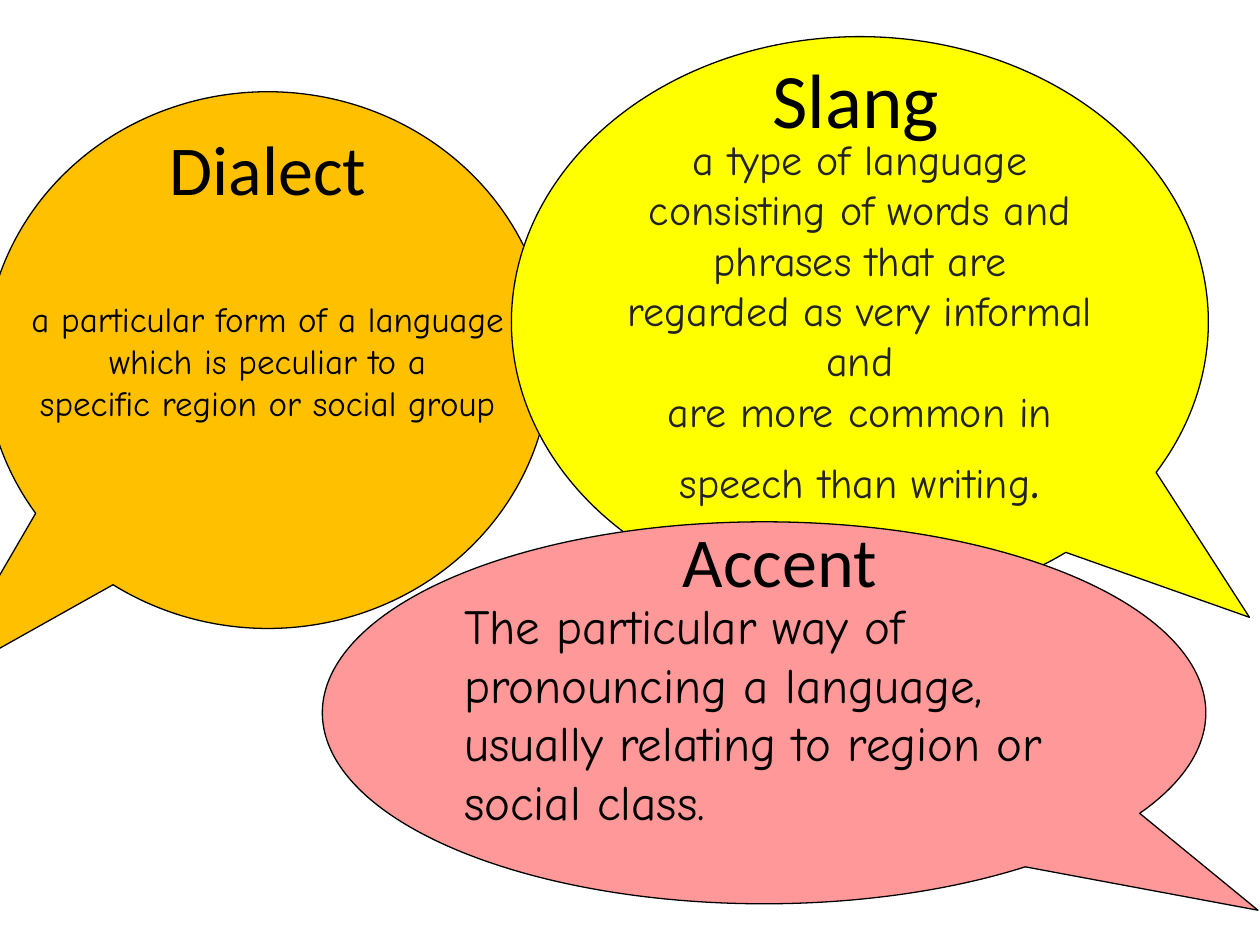
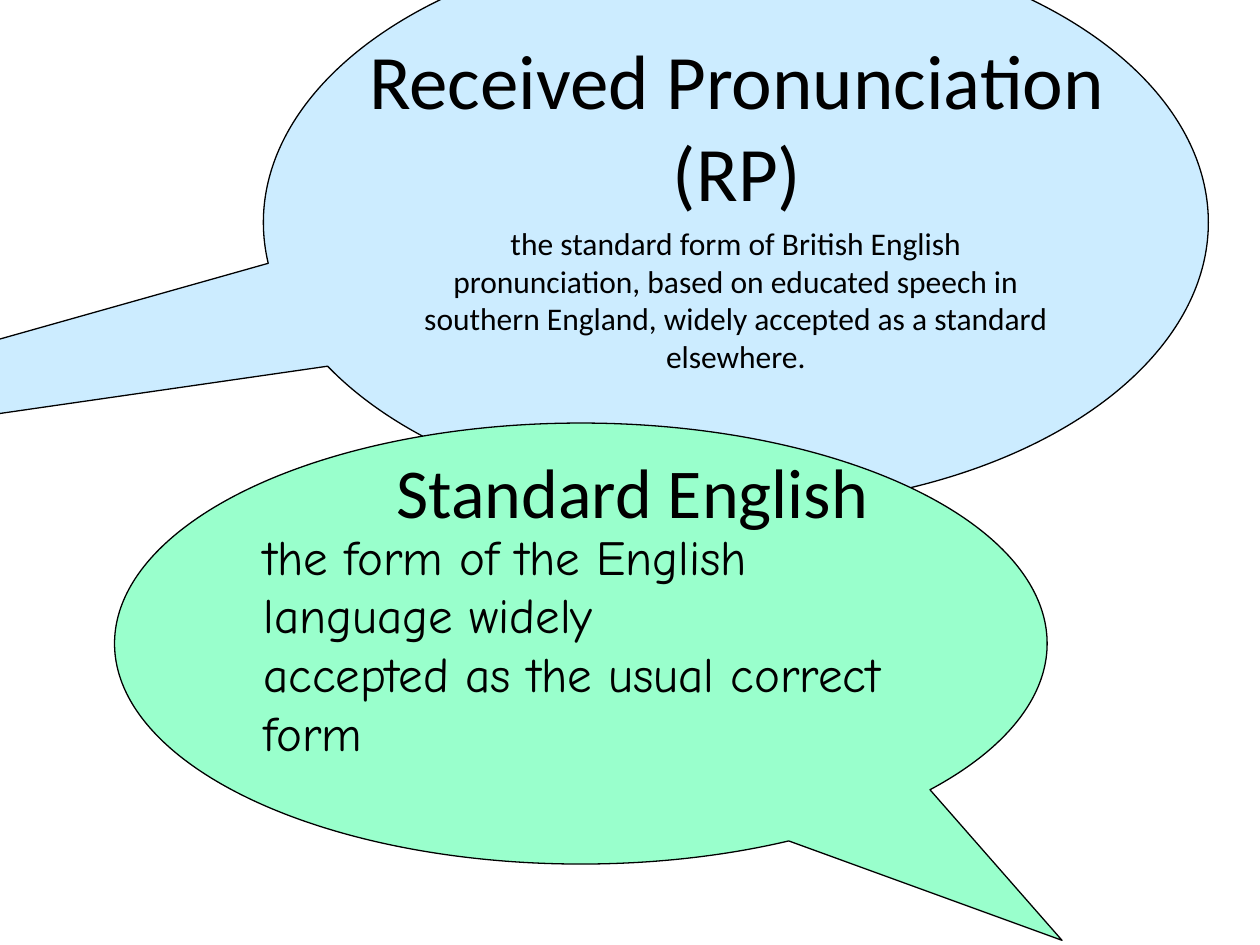
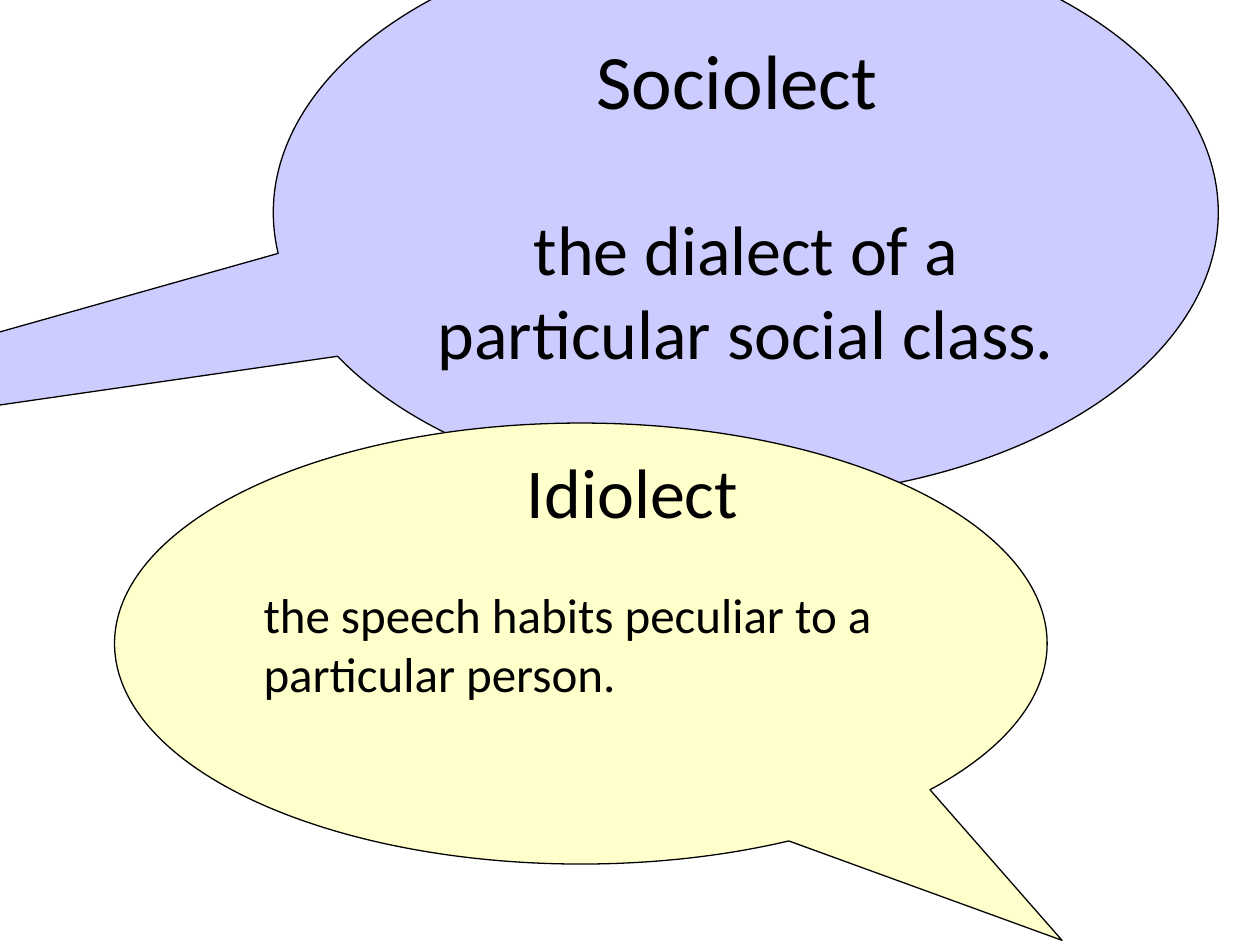
from dataclasses import dataclass, replace

from pptx import Presentation
from pptx.dml.color import RGBColor
from pptx.enum.shapes import MSO_SHAPE as Shape
from pptx.enum.text import MSO_ANCHOR as Anchor, MSO_AUTO_SIZE as AutoSize, PP_ALIGN as Align
from pptx.util import Cm, Pt

BLACK, DARK_GREY = "000000", "222222"
ORANGE, YELLOW, PINK = "FFC000", "FFFF00", "FF9999"
SKY, MINT, LILAC, CREAM = "CCECFF", "99FFCC", "CCCCFF", "FFFFCC"
CALIBRI, COMIC = "Calibri", "Comic Neue"
INSET_TOP = 0.13
BELOW_HEADING = 3.23


@dataclass(frozen=True)
class Outline:
    """Ellipse frame in cm; the tail tip is a fraction of the size from the centre."""
    left: float
    top: float
    width: float
    height: float
    tail: tuple[float, float]


@dataclass(frozen=True)
class Run:
    text: str
    size: int
    font: str = CALIBRI
    color: str = BLACK


@dataclass(frozen=True)
class Bubble:
    outline: Outline
    fill: str
    paragraphs: list[list[Run]]
    align: Align = Align.CENTER
    wrap: bool = True
    inset_top: float = INSET_TOP


@dataclass(frozen=True)
class Heading:
    lines: list[str]
    center: float
    top: float
    width: float
    size: int = 40

    @property
    def height(self) -> float:
        return len(self.lines) * self.size * 0.043 + 0.25


RIGHT_TAIL = (0.559, 0.517)
DIALECT = Outline(-0.3, 1.85, 11.4, 10.82, (-0.586, 0.603))
SLANG = Outline(10.31, 0.74, 14.05, 11.51, RIGHT_TAIL)
ACCENT = Outline(6.5, 10.52, 17.81, 7.7, RIGHT_TAIL)
UPPER = Outline(5.31, -1.27, 19.05, 11.51, (-1.35, 0.471))
LOWER = Outline(2.31, 8.53, 18.8, 8.89, (0.516, 0.673))


def upper_heading(lines: list[str], width: float) -> Heading:
    return Heading(lines, 14.86, 0.53, width, 44)


def lower_heading(line: str, width: float) -> Heading:
    return Heading([line], 12.75, 8.92, width)


# Each slide: its bubbles from back to front, then its headings, the first being the title.
SLIDES: list[tuple[list[Bubble], list[Heading]]] = [
    (
        [
            Bubble(DIALECT, ORANGE, [
                [Run("a particular form of a language", 20, COMIC)],
                [Run("which is peculiar to a", 20, COMIC)],
                [Run("specific region or social group", 20, COMIC)],
            ], wrap=False),
            Bubble(SLANG, YELLOW, [
                [Run("a type of language consisting of words and phrases "
                     "that are regarded as very informal and", 24, COMIC, DARK_GREY)],
                [Run("are more common in speech than writing", 24, COMIC, DARK_GREY),
                 Run(".", 36, COMIC, DARK_GREY)],
            ]),
            Bubble(ACCENT, PINK, [
                [Run("The particular way of pronouncing a language, "
                     "usually relating to region or social class.", 28, COMIC)],
            ], Align.LEFT),
        ],
        [
            Heading(["Dialect"], 5.4, 2.41, 4.5),
            Heading(["Slang"], 17.25, 0.91, 3.91, 44),
            Heading(["Accent"], 15.72, 10.31, 4.47),
        ],
    ),
    (
        [
            Bubble(UPPER, SKY, [
                [Run("the standard form of British English pronunciation, based on educated "
                     "speech in southern England, widely accepted as a standard elsewhere.", 18)],
            ], inset_top=BELOW_HEADING),
            Bubble(LOWER, MINT, [
                [Run("the form of the English language widely", 28, COMIC)],
                [Run("accepted as the usual correct form", 28, COMIC)],
            ], Align.LEFT),
        ],
        [
            upper_heading(["Received Pronunciation", "(RP)"], 15.49),
            lower_heading("Standard English", 10.11),
        ],
    ),
    (
        [
            Bubble(replace(UPPER, left=5.51, top=-1.47), LILAC, [
                [Run("the dialect of a particular social class.", 40)],
            ], inset_top=BELOW_HEADING),
            Bubble(LOWER, CREAM, [
                [Run("the speech habits peculiar to a particular person.", 28)],
            ], Align.LEFT),
        ],
        [
            upper_heading(["Sociolect"], 6.25),
            lower_heading("Idiolect", 4.8),
        ],
    ),
]


def rgb(value: str) -> RGBColor:
    return RGBColor.from_string(value)


def write(tf, paragraphs: list[list[Run]], align: Align) -> None:
    for i, runs in enumerate(paragraphs):
        p = tf.add_paragraph() if i else tf.paragraphs[0]
        p.alignment = align
        for run in runs:
            r = p.add_run()
            r.text = run.text
            r.font.size = Pt(run.size)
            r.font.name = run.font
            r.font.color.rgb = rgb(run.color)


def draw_bubble(s, bubble: Bubble) -> None:
    o = bubble.outline
    sp = s.shapes.add_shape(Shape.OVAL_CALLOUT, Cm(o.left), Cm(o.top), Cm(o.width), Cm(o.height))
    sp.adjustments[0], sp.adjustments[1] = o.tail
    sp.shadow.inherit = False
    sp.fill.solid()
    sp.fill.fore_color.rgb = rgb(bubble.fill)
    sp.line.color.rgb = rgb(BLACK)
    sp.line.width = Pt(0.75)
    tf = sp.text_frame
    tf.word_wrap = bubble.wrap
    tf.vertical_anchor = Anchor.MIDDLE
    tf.margin_top = Cm(bubble.inset_top)
    write(tf, bubble.paragraphs, bubble.align)


def draw_heading(s, heading: Heading, is_title: bool) -> None:
    if is_title:
        sp = s.shapes.title
        sp.element.getparent().append(sp.element)  # in front of the bubbles
    else:
        sp = s.shapes.add_textbox(0, 0, 0, 0)
    sp.left, sp.top = Cm(heading.center - heading.width / 2), Cm(heading.top)
    sp.width, sp.height = Cm(heading.width), Cm(heading.height)
    tf = sp.text_frame
    tf.word_wrap = False
    tf.auto_size = AutoSize.SHAPE_TO_FIT_TEXT
    tf.vertical_anchor = Anchor.TOP
    write(tf, [[Run(line, heading.size)] for line in heading.lines], Align.CENTER)


def main() -> None:
    prs = Presentation()
    prs.slide_width, prs.slide_height = Cm(25.4), Cm(19.05)
    title_only = prs.slide_layouts[5]
    for bubbles, headings in SLIDES:
        s = prs.slides.add_slide(title_only)
        for bubble in bubbles:
            draw_bubble(s, bubble)
        for i, heading in enumerate(headings):
            draw_heading(s, heading, is_title=i == 0)
    prs.save("out.pptx")


if __name__ == "__main__":
    main()
